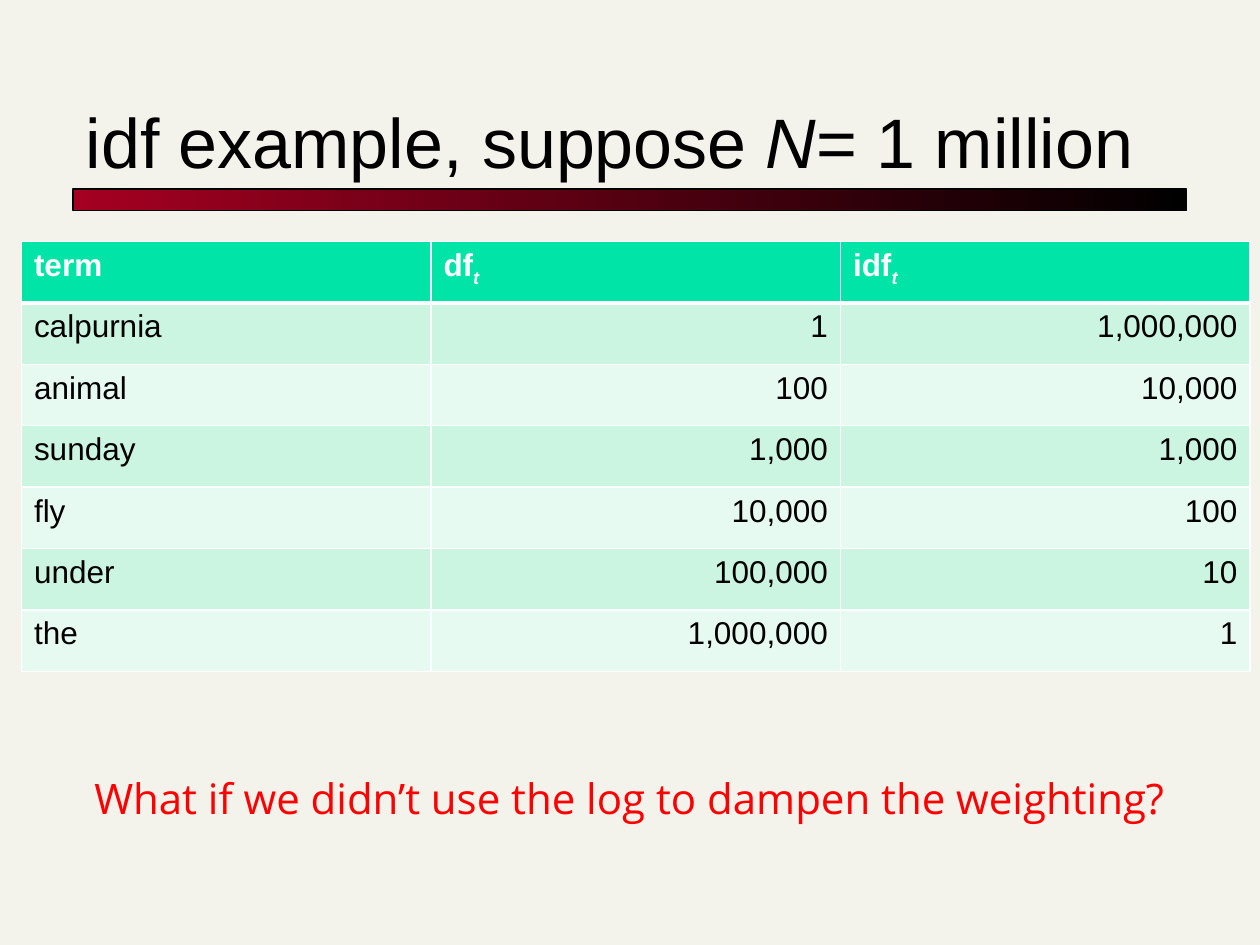
from lxml import etree
from pptx import Presentation
from pptx import util as u
from pptx.dml.color import RGBColor
from pptx.enum import shapes, text
from pptx.oxml.ns import qn

TITLE = [("idf example, suppose ", False), ("N", True), ("= 1 million", False)]
HEADERS = ["term", "df", "idf"]
ROWS = [
    ("calpurnia", "1", "1,000,000"),
    ("animal", "100", "10,000"),
    ("sunday", "1,000", "1,000"),
    ("fly", "10,000", "100"),
    ("under", "100,000", "10"),
    ("the", "1,000,000", "1"),
]
QUESTION = "What if we didn’t use the log to dampen the weighting?"
HEADER_FILL, BANDS = "00E4A8", ("CBF5E1", "E7FAF1")
MARGIN, BAR_TOP = 41.76, 108
COL_W, ROW_H = 234, 35.1


def rgb(value):
    return RGBColor.from_string(value)


def box(left, top, width, height):
    return [u.Pt(v) for v in (left, top, width, height)]


def add_run(p, content, size, color, font="Arial", bold=False, italic=False):
    r = p.add_run()
    r.text = content
    f = r.font
    f.name, f.size, f.bold, f.italic = font, u.Pt(size), bold, italic
    f.color.rgb = rgb(color)
    return r


def set_borders(cell, top, bottom):
    tc_pr = cell._tc.get_or_add_tcPr()
    widths = {"lnL": 1, "lnR": 1, "lnT": top, "lnB": bottom}
    for i, (side, width) in enumerate(widths.items()):
        ln = etree.Element(qn(f"a:{side}"), w=str(u.Pt(width)))
        fill = etree.SubElement(ln, qn("a:solidFill"))
        etree.SubElement(fill, qn("a:srgbClr"), val="FFFFFF")
        tc_pr.insert(i, ln)


def add_title(s):
    title = s.shapes.title
    title.left, title.top, title.width, title.height = box(MARGIN, 30.24, 635.76, 77.76)
    tf = title.text_frame
    tf.auto_size = text.MSO_AUTO_SIZE.NONE
    tf.vertical_anchor = text.MSO_ANCHOR.BOTTOM
    p = tf.paragraphs[0]
    p.alignment = text.PP_ALIGN.LEFT
    for content, italic in TITLE:
        add_run(p, content, 40, "000000", italic=italic)


def add_bar(s):
    bar = s.shapes.add_shape(shapes.MSO_SHAPE.RECTANGLE, *box(MARGIN, BAR_TOP, 636.48, 12.24))
    bar.shadow.inherit = False
    bar.fill.gradient()
    bar.fill.gradient_angle = 0
    for stop, color, position in zip(bar.fill.gradient_stops, ("A50021", "000000"), (0, 1)):
        stop.color.rgb = rgb(color)
        stop.position = position
    bar.line.color.rgb = rgb("000000")
    bar.line.width = u.Pt(0.75)


def add_idf_table(s):
    n_rows, n_cols = len(ROWS) + 1, len(HEADERS)
    frame = s.shapes.add_table(n_rows, n_cols, *box(12.24, 138, COL_W * n_cols, ROW_H * n_rows))
    table = frame.table
    for col in table.columns:
        col.width = u.Pt(COL_W)
    for i, values in enumerate([HEADERS, *ROWS]):
        table.rows[i].height = u.Pt(ROW_H)
        header = i == 0
        for j, value in enumerate(values):
            cell = table.cell(i, j)
            cell.fill.solid()
            cell.fill.fore_color.rgb = rgb(HEADER_FILL if header else BANDS[(i - 1) % 2])
            set_borders(cell, 3 if i == 1 else 1, 3 if header else 1)
            p = cell.text_frame.paragraphs[0]
            color = "FFFFFF" if header else "000000"
            add_run(p, value, 18, color, bold=header)
            if header and j:
                sub = add_run(p, "t", 18, color, bold=True, italic=True)
                sub.font._element.set("baseline", "-25000")
            elif j:
                p.alignment = text.PP_ALIGN.RIGHT


def add_question(s):
    tf = s.shapes.add_textbox(*box(46.8, 437.76, 664.56, 36)).text_frame
    tf.word_wrap = False
    tf.auto_size = text.MSO_AUTO_SIZE.SHAPE_TO_FIT_TEXT
    add_run(tf.paragraphs[0], QUESTION, 24, "FF0000", font="Open Sans")


def main():
    prs = Presentation()
    prs.slide_width, prs.slide_height = u.Pt(720), u.Pt(540)
    s = prs.slides.add_slide(prs.slide_layouts[5])
    s.background.fill.solid()
    s.background.fill.fore_color.rgb = rgb("F4F3EB")
    add_bar(s)
    add_title(s)
    add_idf_table(s)
    add_question(s)
    prs.save("out.pptx")


if __name__ == "__main__":
    main()
